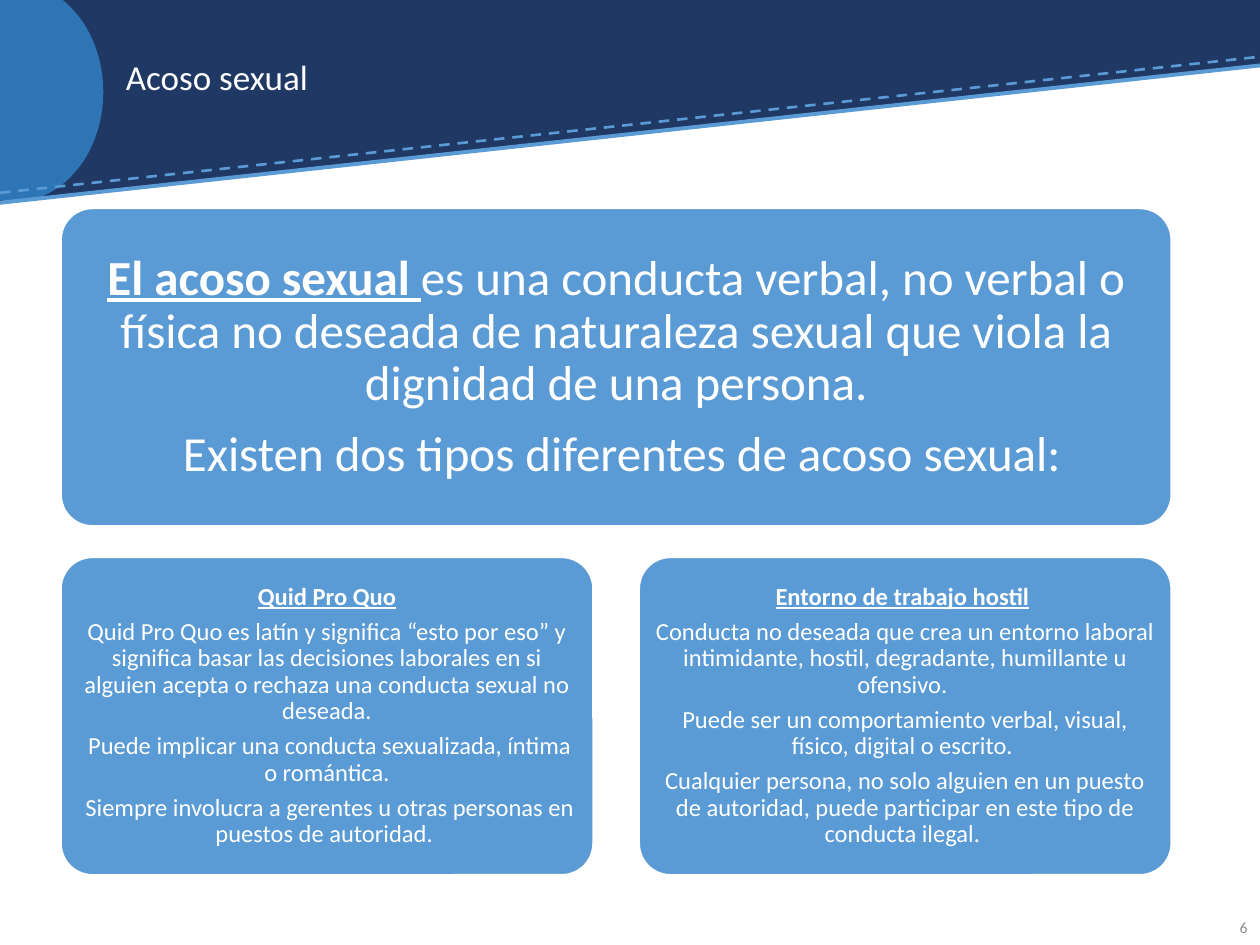
from dataclasses import dataclass

from lxml import etree
from pptx import Presentation
from pptx.dml.color import RGBColor
from pptx.enum.dml import MSO_LINE
from pptx.enum.shapes import MSO_CONNECTOR, MSO_SHAPE
from pptx.enum.text import MSO_ANCHOR, PP_ALIGN
from pptx.oxml.ns import qn
from pptx.util import Pt

RECTANGLE = MSO_SHAPE.RECTANGLE
TRIANGLE = MSO_SHAPE.RIGHT_TRIANGLE
OVAL = MSO_SHAPE.OVAL
ROUNDED = MSO_SHAPE.ROUNDED_RECTANGLE
STRAIGHT = MSO_CONNECTOR.STRAIGHT
DASH = MSO_LINE.DASH
SOLID = MSO_LINE.SOLID
MIDDLE = MSO_ANCHOR.MIDDLE
LEFT, CENTER, RIGHT = PP_ALIGN.LEFT, PP_ALIGN.CENTER, PP_ALIGN.RIGHT

FONT = "Calibri"
COLORS = {
    "navy": "203864",
    "blue": "2E75B6",
    "sky": "5B9BD5",
    "white": "FFFFFF",
    "gray": "8C8C8C",
}


@dataclass
class Area:
    left: float
    top: float
    width: float
    height: float

    def lengths(self) -> list:
        return [Pt(value) for value in (self.left, self.top, self.width, self.height)]


@dataclass
class Span:
    text: str
    strong: bool = False


@dataclass
class Card:
    area: Area
    size: float
    margin: float
    paragraphs: list


@dataclass
class Stripe:
    start: float
    end: float
    width: float
    dash: int


def color(name: str) -> RGBColor:
    return RGBColor.from_string(COLORS[name])


def add_block(page, kind, area: Area, fill: str):
    block = page.shapes.add_shape(kind, *area.lengths())
    block.shadow.inherit = False
    block.fill.solid()
    block.fill.fore_color.rgb = color(fill)
    block.line.fill.background()
    return block


def add_span(para, span: Span, size: float, ink: str) -> None:
    run = para.add_run()
    run.text = span.text
    run.font.name = FONT
    run.font.size = Pt(size)
    run.font.bold = span.strong
    run.font.underline = span.strong
    run.font.color.rgb = color(ink)


def add_label(page, area: Area, text: str, size: float, ink: str, align) -> None:
    frame = page.shapes.add_textbox(*area.lengths()).text_frame
    frame.word_wrap = True
    frame.vertical_anchor = MIDDLE
    para = frame.paragraphs[0]
    para.alignment = align
    para.line_spacing = 0.9
    add_span(para, Span(text), size, ink)


def add_card(page, card: Card) -> None:
    box = add_block(page, ROUNDED, card.area, "sky")
    box.adjustments[0] = 0.1
    box.line.color.rgb = color("white")
    box.line.width = Pt(1.5)
    frame = box.text_frame
    frame.word_wrap = True
    frame.vertical_anchor = MIDDLE
    frame.margin_left = frame.margin_right = Pt(card.margin)
    frame.margin_top = frame.margin_bottom = Pt(card.margin)
    for index, spans in enumerate(card.paragraphs):
        para = frame.add_paragraph() if index else frame.paragraphs[0]
        para.alignment = CENTER
        para.line_spacing = 0.9
        para.space_after = Pt(card.size * 0.35)
        for span in spans:
            add_span(para, span, card.size, "white")


def add_stripe(page, stripe: Stripe) -> None:
    line = page.shapes.add_connector(
        STRAIGHT, Pt(0), Pt(stripe.start), Pt(720), Pt(stripe.end)
    )
    line.line.color.rgb = color("sky")
    line.line.width = Pt(stripe.width)
    line.line.dash_style = stripe.dash
    etree.SubElement(line.element.spPr, qn("a:effectLst"))


CARD_LEFT, CARD_WIDTH, CARD_HEIGHT = 34.6, 635, 182
HALF_WIDTH = 304.6
UPPER_TOP, LOWER_TOP = 118.8, 318.2
RIGHT_LEFT = CARD_LEFT + CARD_WIDTH - HALF_WIDTH

STRIPES = [Stripe(110.2, 32.4, 1.5, DASH), Stripe(115.9, 37.4, 2.25, SOLID)]

CARDS = [
    Card(Area(CARD_LEFT, UPPER_TOP, CARD_WIDTH, CARD_HEIGHT), 28, 8.4, [
        [
            Span("El acoso sexual ", True),
            Span("es una conducta verbal, no verbal o física no deseada de "
                 "naturaleza sexual que viola la dignidad de una persona."),
        ],
        [Span(" Existen dos tipos diferentes de acoso sexual:")],
    ]),
    Card(Area(CARD_LEFT, LOWER_TOP, HALF_WIDTH, CARD_HEIGHT), 14, 4.2, [
        [Span("Quid Pro Quo", True)],
        [Span("Quid Pro Quo es latín y significa “esto por eso” y significa basar "
              "las decisiones laborales en si alguien acepta o rechaza una "
              "conducta sexual no deseada.")],
        [Span(" Puede implicar una conducta sexualizada, íntima o romántica.")],
        [Span(" Siempre involucra a gerentes u otras personas en puestos de "
              "autoridad. ")],
    ]),
    Card(Area(RIGHT_LEFT, LOWER_TOP, HALF_WIDTH, CARD_HEIGHT), 14, 4.2, [
        [Span("Entorno de trabajo hostil", True), Span(" ")],
        [Span("Conducta no deseada que crea un entorno laboral intimidante, "
              "hostil, degradante, humillante u ofensivo. ")],
        [Span("Puede ser un comportamiento verbal, visual, físico, digital o "
              "escrito. ")],
        [Span("Cualquier persona, no solo alguien en un puesto de autoridad, "
              "puede participar en este tipo de conducta ilegal. ")],
    ]),
]


def main() -> None:
    deck = Presentation()
    deck.slide_width, deck.slide_height = Pt(720), Pt(540)
    page = deck.slides.add_slide(deck.slide_layouts[6])
    add_block(page, RECTANGLE, Area(0, 0, 720, 37.4), "navy")
    slope = add_block(page, TRIANGLE, Area(0, 36.7, 720, 78.5), "navy")
    slope.element.spPr.find(qn("a:xfrm")).set("flipV", "1")
    add_block(page, OVAL, Area(-42.5, -10, 101.5, 125.2), "blue")
    for stripe in STRIPES:
        add_stripe(page, stripe)
    add_label(page, Area(64.8, 14.4, 579.6, 62), "Acoso sexual", 20, "white", LEFT)
    add_label(page, Area(682, 516.2, 38, 28.8), "6", 9, "gray", RIGHT)
    for card in CARDS:
        add_card(page, card)
    deck.save("out.pptx")


if __name__ == "__main__":
    main()
